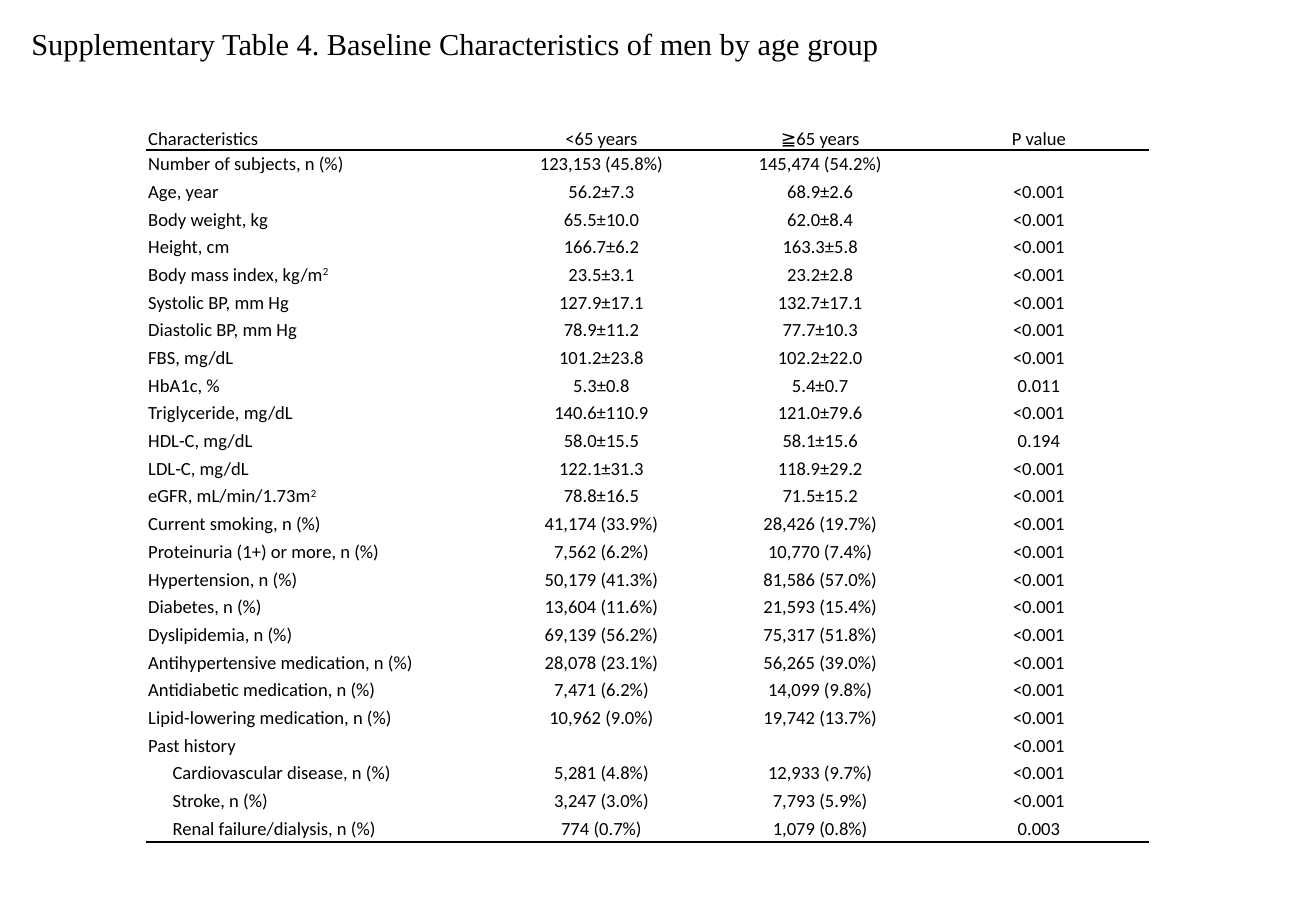
from dataclasses import dataclass

from lxml import etree
from pptx import Presentation
from pptx.dml.color import RGBColor
from pptx.enum.text import MSO_ANCHOR, PP_ALIGN
from pptx.oxml.ns import qn
from pptx.slide import Slide
from pptx.table import Table, _Cell
from pptx.text.text import _Paragraph
from pptx.util import Inches, Pt

LEFT, CENTER = PP_ALIGN.LEFT, PP_ALIGN.CENTER
MIDDLE = MSO_ANCHOR.MIDDLE


@dataclass(frozen=True)
class Theme:
    ink: str = "000000"
    paper: str = "FFFFFF"
    title_font: str = "Times New Roman"
    table_font: str = "Calibri"
    title_size: int = 18
    table_size: int = 11
    rule_width: int = 1


@dataclass(frozen=True)
class Characteristic:
    label: str
    under_65: str
    over_65: str
    p_value: str = "<0.001"
    superscript: str = ""
    indented: bool = False


THEME = Theme()
TITLE = "Supplementary Table 4. Baseline Characteristics of men by age group"
CHARACTERISTICS = [
    Characteristic("Characteristics", "<65 years", "≧65 years", "P value"),
    Characteristic("Number of subjects, n (%)", "123,153 (45.8%)", "145,474 (54.2%)", ""),
    Characteristic("Age, year", "56.2±7.3", "68.9±2.6"),
    Characteristic("Body weight, kg", "65.5±10.0", "62.0±8.4"),
    Characteristic("Height, cm", "166.7±6.2", "163.3±5.8"),
    Characteristic("Body mass index, kg/m", "23.5±3.1", "23.2±2.8", superscript="2"),
    Characteristic("Systolic BP, mm Hg", "127.9±17.1", "132.7±17.1"),
    Characteristic("Diastolic BP, mm Hg", "78.9±11.2", "77.7±10.3"),
    Characteristic("FBS, mg/dL", "101.2±23.8", "102.2±22.0"),
    Characteristic("HbA1c, %", "5.3±0.8", "5.4±0.7", "0.011"),
    Characteristic("Triglyceride, mg/dL", "140.6±110.9", "121.0±79.6"),
    Characteristic("HDL-C, mg/dL", "58.0±15.5", "58.1±15.6", "0.194"),
    Characteristic("LDL-C, mg/dL", "122.1±31.3", "118.9±29.2"),
    Characteristic("eGFR, mL/min/1.73m", "78.8±16.5", "71.5±15.2", superscript="2"),
    Characteristic("Current smoking, n (%)", "41,174 (33.9%)", "28,426 (19.7%)"),
    Characteristic("Proteinuria (1+) or more, n (%)", "7,562 (6.2%)", "10,770 (7.4%)"),
    Characteristic("Hypertension, n (%)", "50,179 (41.3%)", "81,586 (57.0%)"),
    Characteristic("Diabetes, n (%)", "13,604 (11.6%)", "21,593 (15.4%)"),
    Characteristic("Dyslipidemia, n (%)", "69,139 (56.2%)", "75,317 (51.8%)"),
    Characteristic("Antihypertensive medication, n (%)", "28,078 (23.1%)", "56,265 (39.0%)"),
    Characteristic("Antidiabetic medication, n (%)", "7,471 (6.2%)", "14,099 (9.8%)"),
    Characteristic("Lipid-lowering medication, n (%)", "10,962 (9.0%)", "19,742 (13.7%)"),
    Characteristic("Past history", "", ""),
    Characteristic("Cardiovascular disease, n (%)", "5,281 (4.8%)", "12,933 (9.7%)", indented=True),
    Characteristic("Stroke, n (%)", "3,247 (3.0%)", "7,793 (5.9%)", indented=True),
    Characteristic("Renal failure/dialysis, n (%)", "774 (0.7%)", "1,079 (0.8%)", "0.003", indented=True),
]
COLUMN_WIDTHS = [2.84, 1.8, 1.8, 1.8]
TABLE_HEIGHT, HEADER_HEIGHT = 5.88, 0.18
BODY_ROW_HEIGHT = (TABLE_HEIGHT - HEADER_HEIGHT) / (len(CHARACTERISTICS) - 1)
CELL_INSET, INDENT = 0.01, 0.2


def add_run(paragraph: _Paragraph, text: str, font: str, size: int, raised: bool = False) -> None:
    run = paragraph.add_run()
    run.text = text
    run.font.name = font
    run.font.size = Pt(size)
    run.font.color.rgb = RGBColor.from_string(THEME.ink)
    if raised:
        run.font._element.set("baseline", "30000")


def set_borders(cell: _Cell, top: str, bottom: str) -> None:
    sides = {"a:lnL": THEME.paper, "a:lnR": THEME.paper, "a:lnT": top, "a:lnB": bottom}
    for tag, color in sides.items():
        line = etree.SubElement(cell._tc.get_or_add_tcPr(), qn(tag), w=str(Pt(THEME.rule_width)))
        fill = etree.SubElement(line, qn("a:solidFill"))
        etree.SubElement(fill, qn("a:srgbClr"), val=color)


def fill_cell(cell: _Cell, text: str, align: PP_ALIGN, superscript: str = "", indented: bool = False) -> None:
    cell.vertical_anchor = MIDDLE
    cell.margin_left = Inches(CELL_INSET + INDENT * indented)
    cell.margin_right = cell.margin_top = Inches(CELL_INSET)
    cell.margin_bottom = 0
    cell.fill.background()
    paragraph = cell.text_frame.paragraphs[0]
    paragraph.alignment = align
    if text:
        add_run(paragraph, text, THEME.table_font, THEME.table_size)
    else:
        # Keep an empty cell from stretching its row
        etree.SubElement(paragraph._p, qn("a:endParaRPr"), sz=str(THEME.table_size * 100))
    if superscript:
        add_run(paragraph, superscript, THEME.table_font, THEME.table_size, raised=True)


def fill_row(table: Table, index: int, item: Characteristic) -> None:
    ruled_below = index in (0, len(CHARACTERISTICS) - 1)
    top = THEME.ink if index == 1 else THEME.paper
    bottom = THEME.ink if ruled_below else THEME.paper
    table.rows[index].height = Inches(BODY_ROW_HEIGHT if index else HEADER_HEIGHT)
    label_cell, *value_cells = table.rows[index].cells
    for cell in (label_cell, *value_cells):
        set_borders(cell, top, bottom)
    fill_cell(label_cell, item.label, LEFT, item.superscript, item.indented)
    for cell, value in zip(value_cells, (item.under_65, item.over_65, item.p_value)):
        fill_cell(cell, value, CENTER)


def add_title(slide: Slide) -> None:
    frame = slide.shapes.add_textbox(Inches(0.16), Inches(0.17), Inches(9.34), Inches(0.41)).text_frame
    frame.word_wrap = True
    frame.vertical_anchor = MIDDLE
    paragraph = frame.paragraphs[0]
    paragraph.line_spacing = 0.9
    add_run(paragraph, TITLE, THEME.title_font, THEME.title_size)


def add_characteristics(slide: Slide) -> None:
    table = slide.shapes.add_table(
        len(CHARACTERISTICS), len(COLUMN_WIDTHS),
        Inches(1.21), Inches(1.04), Inches(sum(COLUMN_WIDTHS)), Inches(TABLE_HEIGHT),
    ).table
    table.first_row = table.horz_banding = False
    for column, width in zip(table.columns, COLUMN_WIDTHS):
        column.width = Inches(width)
    for index, item in enumerate(CHARACTERISTICS):
        fill_row(table, index, item)


def main() -> None:
    presentation = Presentation()
    presentation.slide_width, presentation.slide_height = Inches(10.83), Inches(7.5)
    slide = presentation.slides.add_slide(presentation.slide_layouts[6])
    # Heading above the table
    add_title(slide)
    # Baseline characteristics by age group
    add_characteristics(slide)
    presentation.save("out.pptx")


if __name__ == "__main__":
    main()
